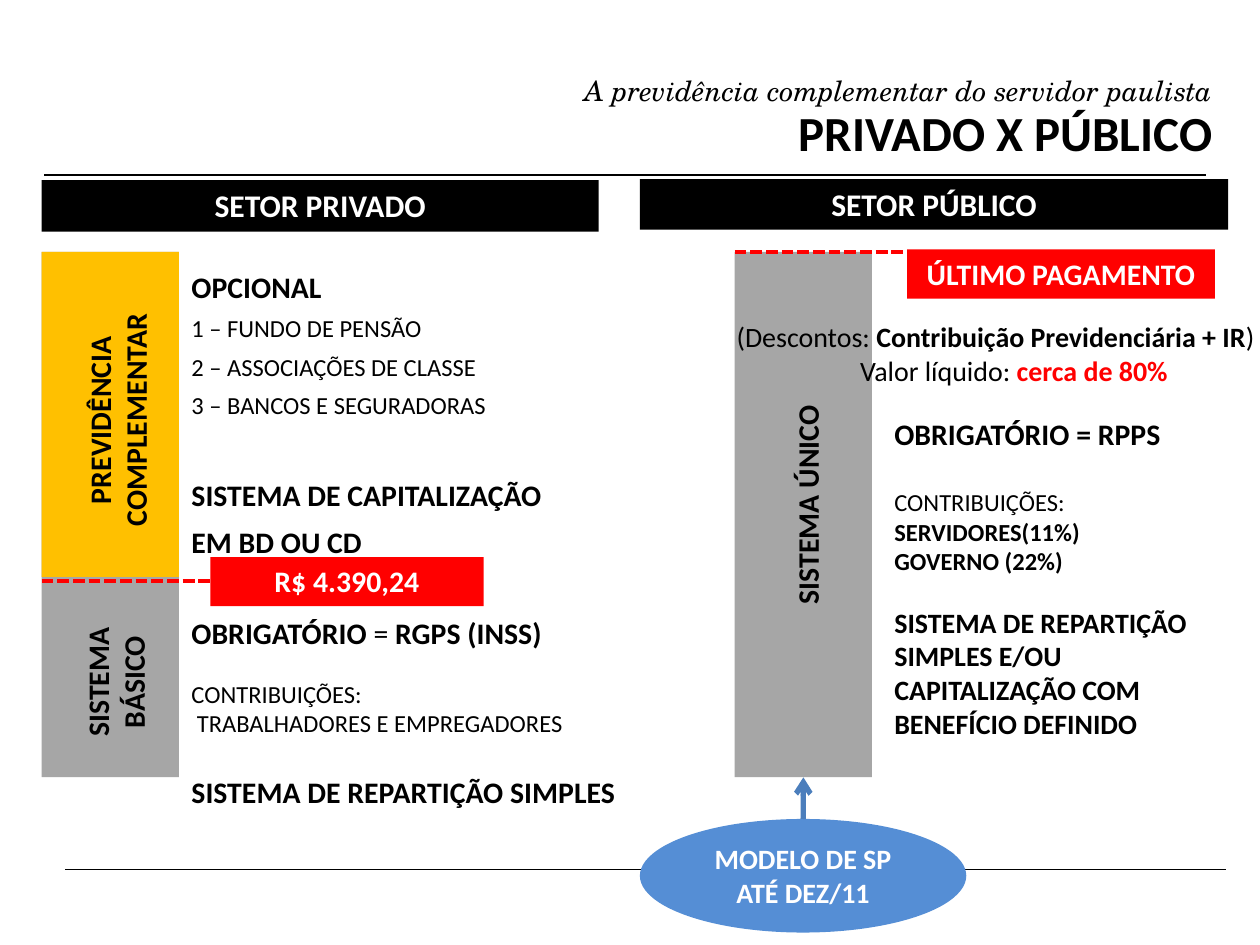
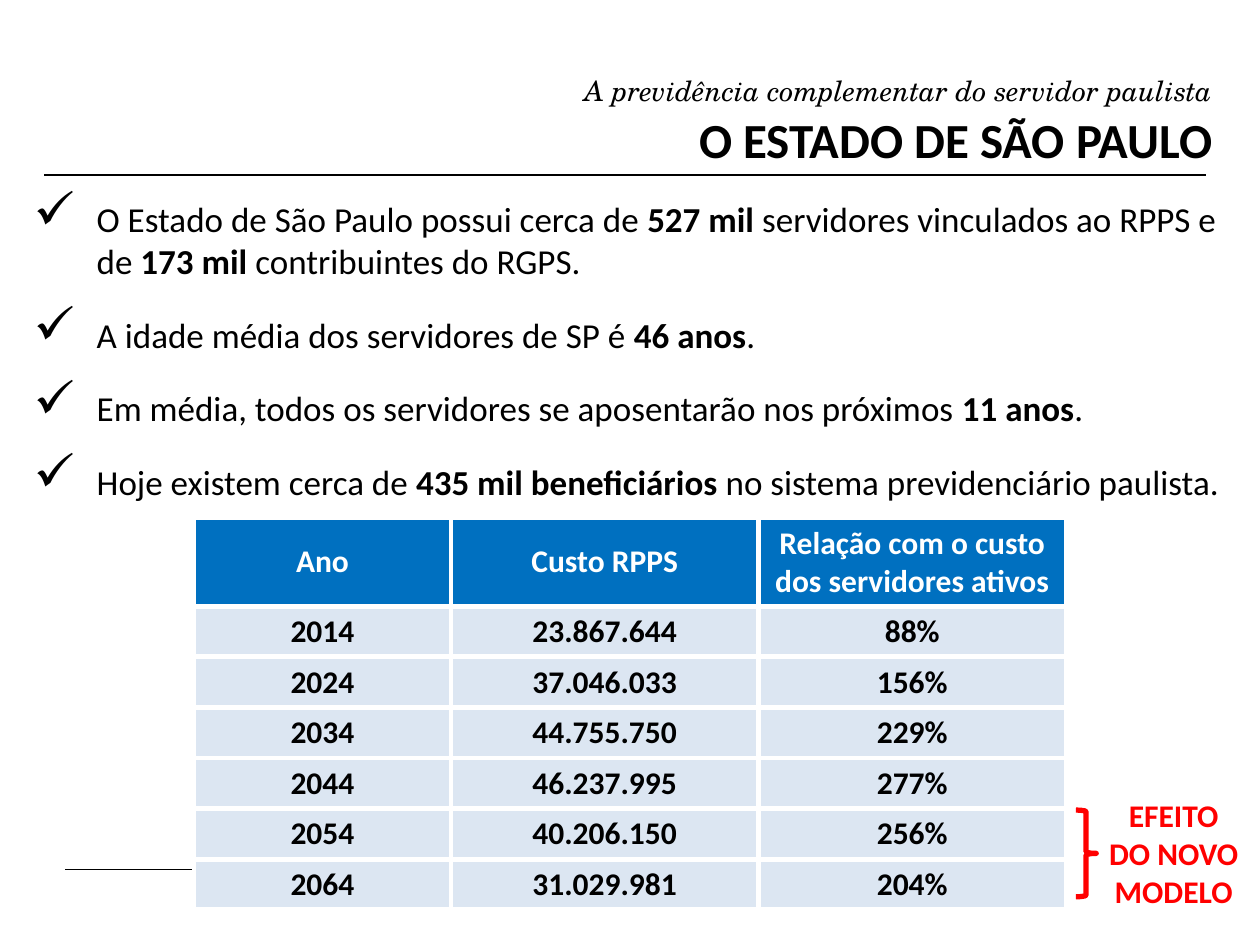
from lxml import etree
from pptx import Presentation
from pptx.dml.color import RGBColor
from pptx.enum.dml import MSO_LINE
from pptx.enum.shapes import MSO_CONNECTOR, MSO_SHAPE
from pptx.enum.text import MSO_ANCHOR, PP_ALIGN
from pptx.oxml.ns import qn
from pptx.util import Cm, Pt

STRAIGHT = MSO_CONNECTOR.STRAIGHT
RECT, OVAL, BRACE = MSO_SHAPE.RECTANGLE, MSO_SHAPE.OVAL, MSO_SHAPE.RIGHT_BRACE
TOP, MIDDLE = MSO_ANCHOR.TOP, MSO_ANCHOR.MIDDLE
LEFT, CENTER, RIGHT = PP_ALIGN.LEFT, PP_ALIGN.CENTER, PP_ALIGN.RIGHT
DASH = MSO_LINE.SQUARE_DOT

BLACK = RGBColor(0x00, 0x00, 0x00)
WHITE = RGBColor(0xFF, 0xFF, 0xFF)
RED = RGBColor(0xFF, 0x00, 0x00)
GRAY = RGBColor(0xA6, 0xA6, 0xA6)
AMBER = RGBColor(0xFF, 0xC0, 0x00)
OVAL_BLUE = RGBColor(0x55, 0x8E, 0xD5)
ARROW_BLUE = RGBColor(0x4B, 0x7E, 0xBC)
HEAD_BLUE = RGBColor(0x00, 0x70, 0xC0)
ROW_BLUE = RGBColor(0xDC, 0xE6, 0xF2)
BODY_FONT, TAGLINE_FONT = "Calibri", "TeX Gyre Schola"

# Places are (left, top, width, height) in centimetres.
# Paragraphs are (text, size, space before); *asterisks* mark bold words.
TAGLINE = "A previdência complementar do servidor paulista"
RULES = [(0.89, 3.53, 24.31), (1.32, 17.53, 24.71)]

SECTOR_HEADERS = [
    ("*SETOR PRIVADO*", (0.84, 3.63, 11.23, 1.04)),
    ("*SETOR PÚBLICO*", (12.9, 3.61, 11.86, 1.02)),
]
BASIC_BAR = (0.84, 5.08, 2.77, 10.59)
COMPLEMENTARY_BAR = (0.84, 5.08, 2.77, 6.55)
SINGLE_BAR = (14.81, 5.08, 2.77, 10.59)
BAR_LABELS = [
    ("*SISTEMA BÁSICO*", (0.84, 12.9, 2.97, 1.7)),
    ("*PREVIDÊNCIA COMPLEMENTAR*", (-0.81, 7.62, 6.35, 1.7)),
    ("*SISTEMA ÚNICO*", (11.2, 9.68, 10.16, 0.99)),
]
COMPLEMENTARY_PLACE = (3.61, 5.08, 8.89, 7.09)
COMPLEMENTARY = [
    ("*OPCIONAL*", 17, 0),
    ("1 – FUNDO DE PENSÃO", 14, 0),
    ("2 – ASSOCIAÇÕES DE CLASSE", 14, 0),
    ("3 – BANCOS E SEGURADORAS", 14, 0),
    ("*SISTEMA DE CAPITALIZAÇÃO*", 17, 27),
    ("*EM BD OU CD*", 17, 0),
]
BASIC_PLACE = (3.61, 12.27, 9.32, 4.19)
BASIC = [
    ("*OBRIGATÓRIO* = *RGPS (INSS)*", 17, 0),
    ("CONTRIBUIÇÕES:", 14, 16),
    ("TRABALHADORES E EMPREGADORES", 14, 0),
    ("*SISTEMA DE REPARTIÇÃO SIMPLES*", 17, 20.7),
]
INDENTED_LINE = 2
SINGLE_PLACE = (17.78, 8.25, 6.99, 8.18)
SINGLE = [
    ("*OBRIGATÓRIO = RPPS*", 17, 0),
    ("CONTRIBUIÇÕES:", 14, 20.7),
    ("*SERVIDORES(11%)*", 14, 0),
    ("*GOVERNO (22%)*", 14, 0),
    ("*SISTEMA DE REPARTIÇÃO SIMPLES E/OU CAPITALIZAÇÃO COM "
     "BENEFÍCIO DEFINIDO*", 16, 17),
]
# Badge text, badge place, dashed line (start x, y, end x)
LIMITS = [
    ("*R$ 4.390,24*", (4.24, 11.23, 5.51, 0.99), (0.84, 11.71, 5.92)),
    ("*ÚLTIMO PAGAMENTO*", (18.29, 5.03, 6.2, 0.99), (14.81, 5.08, 19.25)),
]
MODEL, MODEL_PLACE = "*MODELO DE SP ATÉ DEZ/11*", (12.9, 16.51, 6.58, 2.29)
DISCOUNTS_PLACE = (14.6, 6.32, 11.68, 1.63)
DISCOUNTS = [
    ("(Descontos: *Contribuição Previdenciária + IR*)", 16, 0),
    ("Valor líquido: *cerca de 80%*", 16, 0),
]

FACTS_PLACE = (0.43, 3.86, 24.97, 6.45)
FACTS = [
    "O Estado de São Paulo possui cerca de *527 mil* servidores vinculados "
    "ao RPPS e de *173 mil* contribuintes do RGPS.",
    "A idade média dos servidores de SP é *46 anos*.",
    "Em média, todos os servidores se aposentarão nos próximos *11 anos*.",
    "Hoje existem cerca de *435 mil beneficiários* no sistema "
    "previdenciário paulista.",
]
COSTS = [
    ("Ano", "Custo RPPS", "Relação com o custo dos servidores ativos"),
    ("2014", "23.867.644", "88%"),
    ("2024", "37.046.033", "156%"),
    ("2034", "44.755.750", "229%"),
    ("2044", "46.237.995", "277%"),
    ("2054", "40.206.150", "256%"),
    ("2064", "31.029.981", "204%"),
]
COSTS_LEFT, COSTS_TOP = 3.91, 10.44
COLUMN_WIDTHS = (5.18, 6.2, 6.2)
HEAD_HEIGHT, ROW_HEIGHT = 1.78, 1.02
FOOTER_MASK = (20.9, 15.32, 1.8, 2.97)
EFFECT, EFFECT_PLACE = "*EFEITO DO NOVO MODELO*", (22.1, 15.93, 3.12, 2.57)
BRACE_PLACE = (21.69, 16.33, 0.41, 1.75)


def cm(values):
    return [Cm(value) for value in values]


def write(frame, paragraphs, color=BLACK, bold_color=None, align=LEFT,
          anchor=TOP, spacing=None, **font_format):
    frame.word_wrap = True
    frame.vertical_anchor = anchor
    for number, (text, size, before) in enumerate(paragraphs):
        paragraph = frame.add_paragraph() if number else frame.paragraphs[0]
        paragraph.alignment = align
        if spacing:
            paragraph.line_spacing = spacing
        if before:
            paragraph.space_before = Pt(before)
        for part, words in enumerate(text.split("*")):
            if not words:
                continue
            run = paragraph.add_run()
            run.text = words
            bold = part % 2 == 1
            values = {"name": BODY_FONT, "size": Pt(size), "bold": bold}
            for key, value in (values | font_format).items():
                setattr(run.font, key, value)
            run.font.color.rgb = bold_color if bold and bold_color else color


def add_text(slide, place, paragraphs, **text_format):
    box = slide.shapes.add_textbox(*cm(place))
    write(box.text_frame, paragraphs, **text_format)
    return box


def add_block(slide, place, fill, paragraphs=(), kind=RECT, color=WHITE):
    block = slide.shapes.add_shape(kind, *cm(place))
    block.shadow.inherit = False
    block.fill.solid()
    block.fill.fore_color.rgb = fill
    block.line.fill.background()
    write(block.text_frame, paragraphs, color=color, align=CENTER)
    return block


def add_line(slide, start_x, y, end_x, color=BLACK, width=0.75, dash=None):
    line = slide.shapes.add_connector(STRAIGHT, *cm((start_x, y, end_x, y)))
    etree.SubElement(line._element.spPr, qn("a:effectLst"))
    line.line.color.rgb = color
    line.line.width = Pt(width)
    if dash:
        line.line.dash_style = dash
    return line


def add_base(prs, title, title_top):
    """Add a slide with the shared rules, tagline and title."""
    slide = prs.slides.add_slide(prs.slide_layouts[6])
    for rule in RULES:
        add_line(slide, *rule)
    heading = {"align": RIGHT, "anchor": MIDDLE}
    add_text(slide, (4.29, 1.3, 20.4, 1.04), [(TAGLINE, 16, 0)],
             name=TAGLINE_FONT, italic=True, **heading)
    add_text(slide, (4.29, title_top, 20.4, 1.04), [(title, 28, 0)], **heading)
    return slide


def set_indent(paragraph, margin, hanging=0):
    properties = paragraph._p.get_or_add_pPr()
    properties.set("marL", str(Cm(margin)))
    properties.set("indent", str(-Cm(hanging)))
    return properties


def add_check(paragraph):
    properties = set_indent(paragraph, 1.27, 1.27)
    etree.SubElement(properties, qn("a:buSzPct")).set("val", "150000")
    etree.SubElement(properties, qn("a:buChar")).set("char", "✓")


def add_borders(cell, color, width):
    properties = cell._tc.get_or_add_tcPr()
    for position, side in enumerate(("lnL", "lnR", "lnT", "lnB")):
        border = etree.Element(qn(f"a:{side}"), w=str(Pt(width)))
        fill = etree.SubElement(border, qn("a:solidFill"))
        etree.SubElement(fill, qn("a:srgbClr")).set("val", str(color))
        properties.insert(position, border)


def add_comparison(prs):
    slide = add_base(prs, "*PRIVADO X PÚBLICO*", 2.13)
    add_block(slide, BASIC_BAR, GRAY)
    add_block(slide, COMPLEMENTARY_BAR, AMBER)
    single_bar = add_block(slide, SINGLE_BAR, GRAY)
    for label, place in BAR_LABELS:
        add_text(slide, place, [(label, 17, 0)], align=CENTER).rotation = 270

    basic = add_text(slide, BASIC_PLACE, BASIC)
    set_indent(basic.text_frame.paragraphs[INDENTED_LINE], 0.11)
    add_text(slide, COMPLEMENTARY_PLACE, COMPLEMENTARY, spacing=1.3)
    add_text(slide, SINGLE_PLACE, SINGLE)

    for limit, place, dashes in LIMITS:
        add_line(slide, *dashes, color=RED, width=2.25, dash=DASH)
        add_block(slide, place, RED, [(limit, 17, 0)])
    for sector, place in SECTOR_HEADERS:
        add_block(slide, place, BLACK, [(sector, 18, 0)])

    model = add_block(slide, MODEL_PLACE, OVAL_BLUE, [(MODEL, 16, 0)], OVAL)
    arrow = add_line(slide, 0, 0, 0, ARROW_BLUE, 3)
    arrow.begin_connect(model, 0)
    arrow.end_connect(single_bar, 2)
    etree.SubElement(arrow.line._get_or_add_ln(),
                     qn("a:tailEnd")).set("type", "arrow")

    discounts = add_text(slide, DISCOUNTS_PLACE, DISCOUNTS)
    net_value = discounts.text_frame.paragraphs[1]
    net_value.alignment = CENTER
    net_value.runs[1].font.color.rgb = RED


def add_costs(slide):
    frame = slide.shapes.add_table(
        len(COSTS), len(COLUMN_WIDTHS),
        *cm((COSTS_LEFT, COSTS_TOP, sum(COLUMN_WIDTHS),
             HEAD_HEIGHT + ROW_HEIGHT * (len(COSTS) - 1))))
    table = frame.table
    table.horz_banding = False
    for column, width in zip(table.columns, COLUMN_WIDTHS):
        column.width = Cm(width)
    for r, row in enumerate(COSTS):
        table.rows[r].height = Cm(ROW_HEIGHT if r else HEAD_HEIGHT)
        for c, value in enumerate(row):
            cell = table.cell(r, c)
            write(cell.text_frame, [(f"*{value}*", 18, 0)],
                  color=BLACK if r else WHITE, align=CENTER)
            cell.vertical_anchor = MIDDLE
            cell.fill.solid()
            cell.fill.fore_color.rgb = ROW_BLUE if r else HEAD_BLUE
            add_borders(cell, WHITE, 3)


def add_state(prs):
    slide = add_base(prs, "*O ESTADO DE SÃO PAULO*", 2.29)
    add_block(slide, FOOTER_MASK, WHITE)
    facts = add_text(slide, FACTS_PLACE,
                     [(fact, 20, 18 if n else 0) for n, fact in enumerate(FACTS)])
    for paragraph in facts.text_frame.paragraphs:
        add_check(paragraph)
    add_costs(slide)
    add_block(slide, EFFECT_PLACE, WHITE, [(EFFECT, 18, 0)], color=RED)
    brace = slide.shapes.add_shape(BRACE, *cm(BRACE_PLACE))
    brace.shadow.inherit = False
    brace.fill.background()
    brace.line.color.rgb = RED
    brace.line.width = Pt(3)


def main():
    prs = Presentation()
    prs.slide_width, prs.slide_height = Cm(25.4), Cm(19.05)
    add_comparison(prs)
    add_state(prs)
    prs.save("out.pptx")


if __name__ == "__main__":
    main()
